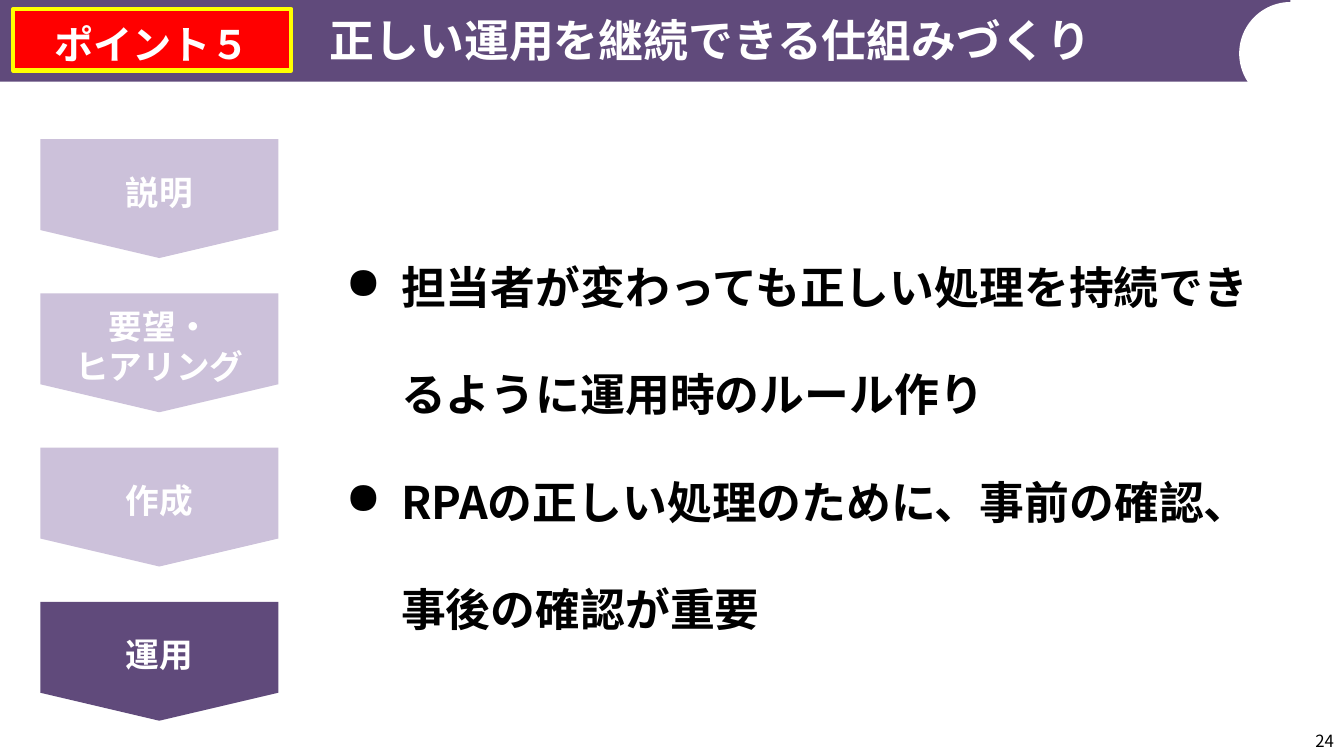
from lxml import etree
from pptx import Presentation
from pptx.dml.color import RGBColor
from pptx.enum import shapes, text
from pptx.oxml import ns
from pptx.util import Inches, Pt

COLORS = {
    "purple": "604A7B",
    "lilac": "CCC1DA",
    "red": "FF0000",
    "yellow": "FFFF00",
    "white": "FFFFFF",
    "black": "000000",
}
FONT = "Noto Sans CJK JP"
ALIGN = text.PP_ALIGN
SHAPE = shapes.MSO_SHAPE


def rgb(name):
    return RGBColor.from_string(COLORS[name])


class PointSlide:
    def __init__(self, presentation):
        self.slide = presentation.slides.add_slide(presentation.slide_layouts[5])

    def fill_text(self, frame, paragraphs, size, color, bold=True, align=ALIGN.LEFT,
                  spacing=None, bullet_indent=None):
        """Fill a text frame with one style, using \\v for line breaks."""
        for index, words in enumerate(paragraphs):
            paragraph = frame.paragraphs[0] if index == 0 else frame.add_paragraph()
            paragraph.text = words
            paragraph.alignment = align
            if spacing:
                paragraph.line_spacing = spacing
            if bullet_indent:
                properties = paragraph._p.get_or_add_pPr()
                properties.set("marL", str(Inches(bullet_indent)))
                properties.set("indent", str(-Inches(bullet_indent)))
                etree.SubElement(properties, ns.qn("a:buChar"), char="●")
            font = paragraph.font
            font.size, font.bold, font.name = Pt(size), bold, FONT
            font.color.rgb = rgb(color)
            etree.SubElement(font._element, ns.qn("a:ea"), typeface=FONT)

    def shape(self, kind, box, fill):
        shape = self.slide.shapes.add_shape(kind, *map(Inches, box))
        shape.shadow.inherit = False
        shape.fill.solid()
        shape.fill.fore_color.rgb = rgb(fill)
        shape.line.fill.background()
        return shape

    def frame(self, shape, margins, wrap=False, anchor=text.MSO_ANCHOR.MIDDLE):
        frame = shape.text_frame
        frame.word_wrap, frame.vertical_anchor = wrap, anchor
        frame.auto_size = text.MSO_AUTO_SIZE.NONE
        (frame.margin_left, frame.margin_top,
         frame.margin_right, frame.margin_bottom) = map(Inches, margins)
        return frame

    def title(self, words):
        title = self.slide.shapes.title
        title.left, title.top, title.width, title.height = map(Inches, (0, 0, 12.78, 0.79))
        # The title sits in front of the header band.
        title.element.getparent().append(title.element)
        frame = self.frame(title, (3.27, 0.04, 0.04, 0.04), wrap=True)
        self.fill_text(frame, [words], 32, "white")

    def textbox(self, box, paragraphs, size, **style):
        textbox = self.slide.shapes.add_textbox(*map(Inches, box))
        frame = self.frame(textbox, (0.1, 0.05, 0.1, 0.05), True, text.MSO_ANCHOR.TOP)
        self.fill_text(frame, paragraphs, size, "black", **style)

    def step(self, top, lines, fill):
        """Draw a downward pentagon with upright text."""
        step = self.shape(SHAPE.PENTAGON, (0.99, top, 1.18, 2.36), fill)
        step.rotation = 90
        step.adjustments[0] = 0.235
        frame = self.frame(step, (0.08,) * 4)
        frame._txBody.bodyPr.set("vert", "vert270")
        self.fill_text(frame, lines, 24, "white", align=ALIGN.CENTER)

    def badge(self, words):
        badge = self.shape(SHAPE.ROUNDED_RECTANGLE, (0.13, 0.09, 2.76, 0.61), "red")
        badge.adjustments[0] = 0
        badge.line.color.rgb = rgb("yellow")
        badge.line.width = Pt(3)
        self.fill_text(self.frame(badge, (0,) * 4), [words], 28, "white",
                       align=ALIGN.CENTER, spacing=Pt(40))


def main():
    presentation = Presentation()
    presentation.slide_width, presentation.slide_height = Inches(13.33), Inches(7.5)
    page = PointSlide(presentation)

    page.textbox((12.47, 7.2, 0.86, 0.3), ["24"], 12, bold=False, align=ALIGN.RIGHT)
    page.shape(SHAPE.RECTANGLE, (0, 0, 12.8, 0.81), "purple")
    page.shape(SHAPE.OVAL, (12.29, 0.02, 1.02, 1.02), "white")
    page.textbox((3.33, 1.99, 9.59, 4.2), [
        "担当者が変わっても正しい処理を持続でき\vるように運用時のルール作り",
        "RPAの正しい処理のために、事前の確認、\v事後の確認が重要",
    ], 32, spacing=2.0, bullet_indent=0.55)
    page.title("正しい運用を継続できる仕組みづくり")

    steps = [["説明"], ["要望・", "ヒアリング"], ["作成"], ["運用"]]
    for index, lines in enumerate(steps):
        current = index == len(steps) - 1
        page.step(0.79 + 1.53 * index, lines, "purple" if current else "lilac")
    page.badge("ポイント５")

    presentation.save("out.pptx")


if __name__ == "__main__":
    main()
